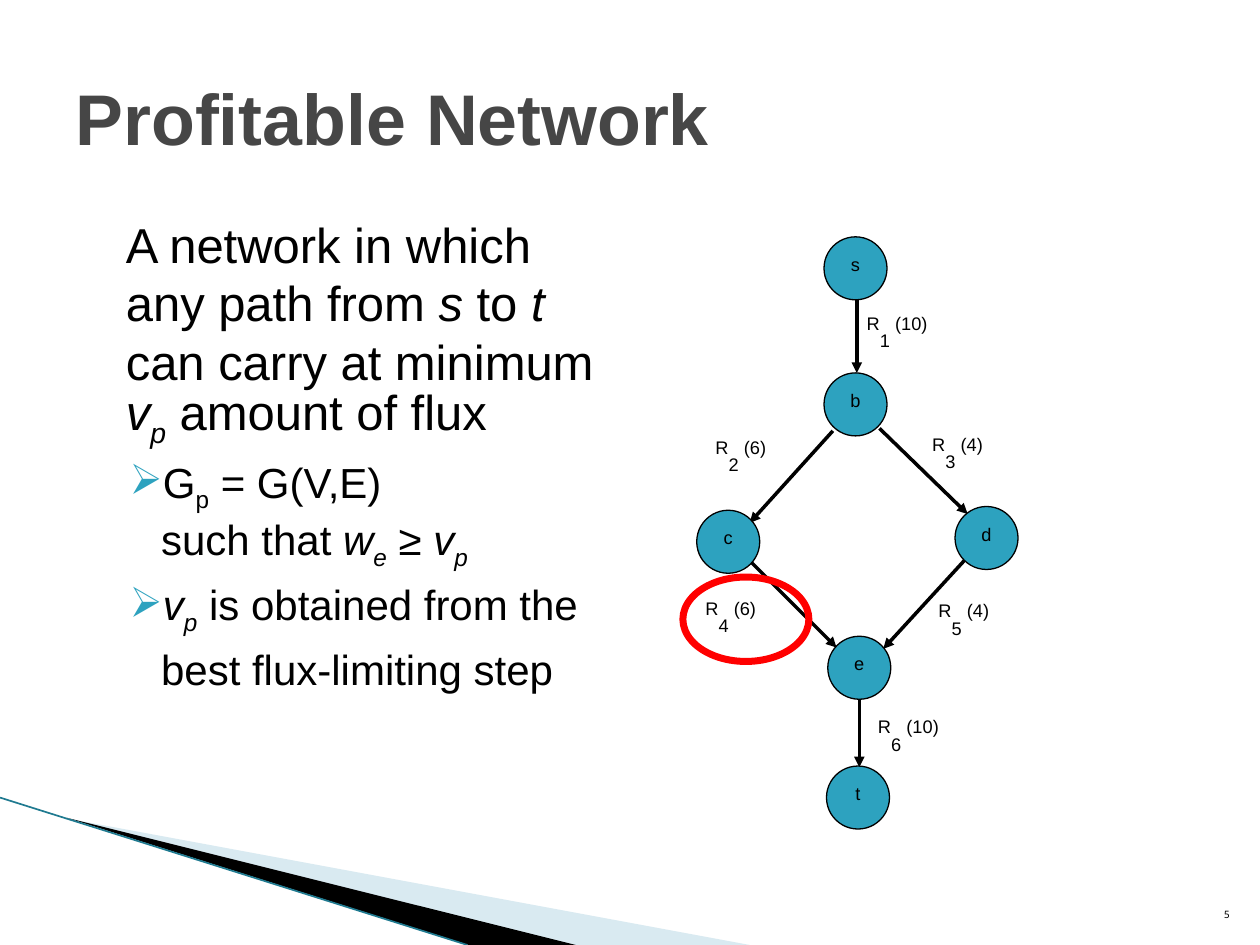
"""Build the Profitable Network slide with its flux graph."""
import pptx
import pptx.util
import pptx.dml.color
import pptx.enum.shapes
import pptx.enum.text
import pptx.oxml.ns
from lxml import etree

Inches = pptx.util.Inches
Pt = pptx.util.Pt
RGBColor = pptx.dml.color.RGBColor
PP_ALIGN = pptx.enum.text.PP_ALIGN
MSO_ANCHOR = pptx.enum.text.MSO_ANCHOR
MSO_SHAPE = pptx.enum.shapes.MSO_SHAPE
qn = pptx.oxml.ns.qn

BLACK = RGBColor(0, 0, 0)
GREY = RGBColor(0x46, 0x46, 0x46)
TEAL = RGBColor(0x2D, 0xA2, 0xBF)
PALE = RGBColor(0xA0, 0xCB, 0xDC)
EDGE = RGBColor(0x1F, 0x7A, 0x90)
RED = RGBColor(0xFF, 0, 0)
SUB, SUP = -25, 30
NODE_SIZE = 0.5

NODES = [("s", 6.54, 1.88), ("b", 6.54, 2.96), ("c", 5.53, 4.05),
         ("d", 7.58, 4.02), ("e", 6.57, 5.05), ("t", 6.56, 6.08)]
EDGES = [((6.8, 2.38), (6.8, 2.96)), ((6.61, 3.42), (5.95, 4.15)),
         ((6.98, 3.4), (7.68, 4.08)), ((5.96, 4.46), (6.64, 5.14)),
         ((7.68, 4.42), (7.01, 5.15)), ((6.82, 5.43), (6.82, 6.09))]
LABELS = [(6.78, 2.4, 10), (5.58, 3.38, 6), (7.3, 3.36, 4),
          (5.5, 4.66, 6), (7.35, 4.68, 4), (6.87, 5.6, 10)]


class Deck:
    def __init__(self):
        self.prs = pptx.Presentation()
        self.prs.slide_width, self.prs.slide_height = Inches(10), Inches(7.5)
        self.s = self.prs.slides.add_slide(self.prs.slide_layouts[5])
        self.font = "Arial"

    def run(self, p, text, size, color=BLACK, base=0, italic=None, bold=None, font=None):
        r = p.add_run()
        r.text = text
        f = r.font
        f.name, f.size, f.italic, f.bold = font or self.font, Pt(size), italic, bold
        f.color.rgb = color
        if base:
            r._r.get_or_add_rPr().set("baseline", str(base * 1000))

    def title(self, text):
        sp = self.s.shapes.title
        sp.left, sp.top, sp.width, sp.height = map(Inches, (0.5, 0.3, 9, 1.25))
        tf = sp.text_frame
        tf.vertical_anchor = MSO_ANCHOR.MIDDLE
        tf.paragraphs[0].alignment = PP_ALIGN.LEFT
        self.run(tf.paragraphs[0], text, 41, GREY, bold=True)

    def textbox(self, x, y, w, h, anchor=MSO_ANCHOR.TOP):
        tf = self.s.shapes.add_textbox(*map(Inches, (x, y, w, h))).text_frame
        tf.word_wrap = True
        tf.vertical_anchor = anchor
        return tf

    def paragraph(self, p, runs, size, spacing, margin, indent=0, before=0, bullet=None):
        pPr = p._p.get_or_add_pPr()
        pPr.set("marL", str(Inches(margin)))
        pPr.set("indent", str(Inches(indent)))
        p.line_spacing, p.space_before = Pt(spacing), Pt(before)
        if bullet:
            clr = etree.SubElement(pPr, qn("a:buClr"))
            etree.SubElement(clr, qn("a:srgbClr"), val=str(TEAL))
            etree.SubElement(pPr, qn("a:buChar"), char=bullet)
        for text, italic, base in runs:
            if text == "\n":
                p.add_line_break()
            else:
                self.run(p, text, size, base=base, italic=italic)

    def ellipse(self, x, y, w, h, line, weight, fill=None, text=None):
        sp = self.s.shapes.add_shape(MSO_SHAPE.OVAL, *map(Inches, (x, y, w, h)))
        sp.shadow.inherit = False
        sp.line.color.rgb, sp.line.width = line, Pt(weight)
        if fill is None:
            sp.fill.background()
        else:
            sp.fill.solid()
            sp.fill.fore_color.rgb = fill
        if text:
            tf = sp.text_frame
            tf.word_wrap = False
            tf.vertical_anchor = MSO_ANCHOR.MIDDLE
            tf.paragraphs[0].alignment = PP_ALIGN.CENTER
            self.run(tf.paragraphs[0], text, 18, base=SUP)

    def line(self, start, end, color=BLACK, weight=2, arrow=True):
        sp = self.s.shapes.add_connector(pptx.enum.shapes.MSO_CONNECTOR.STRAIGHT,
                                         *map(Inches, start + end))
        sp.line.color.rgb, sp.line.width = color, Pt(weight)
        if arrow:
            etree.SubElement(sp.line._get_or_add_ln(), qn("a:tailEnd"), type="triangle")
        etree.SubElement(sp._element.spPr, qn("a:effectLst"))

    def polygon(self, points, color, alpha=None):
        pts = [tuple(map(Inches, pt)) for pt in points]
        fb = self.s.shapes.build_freeform(*pts[0])
        fb.add_line_segments(pts[1:], close=True)
        sp = fb.convert_to_shape()
        sp.shadow.inherit = False
        sp.fill.solid()
        sp.fill.fore_color.rgb = color
        sp.line.fill.background()
        if alpha:
            clr = sp._element.spPr.find(".//" + qn("a:srgbClr"))
            etree.SubElement(clr, qn("a:alpha"), val=str(alpha * 1000))

    def label(self, x, y, number, flux):
        p = self.textbox(x, y, 0.97 if flux > 9 else 0.83, 0.4).paragraphs[0]
        for text, base in (("R", SUP), (f"{number} ", SUB), (f"({flux})", SUP)):
            self.run(p, text, 18, base=base)


def main():
    d = Deck()
    d.polygon([(0.55, 6.5), (5.95, 7.5), (4.56, 7.5)], PALE, 40)
    d.polygon([(0.53, 6.49), (4.57, 7.5), (3.72, 7.5)], BLACK)
    d.line((0, 6.33), (3.71, 7.5), EDGE, 0.95, arrow=False)
    d.title("Profitable Network")

    tf = d.textbox(0.5, 1.62, 4.42, 4.95)
    tf.margin_top = Inches(0.08)
    v_p = [("v", True, 0), ("p", True, SUB)]
    d.paragraph(tf.paragraphs[0], [
        ("A network in which any path from ", False, 0), ("s", True, 0),
        (" to ", False, 0), ("t", True, 0), (" can carry at minimum ", False, 0),
        *v_p, (" amount of flux", False, 0)], 28, 33.5, 0.4)
    bullets = [
        [("G", False, 0), ("p", False, SUB), (" = G(V,E)", False, 0), ("\n", False, 0),
         ("such that ", False, 0), ("w", True, 0), ("e", True, SUB),
         (" ≥ ", False, 0), *v_p],
        [*v_p, (" is obtained from the best flux-limiting step", False, 0)]]
    for runs in bullets:
        d.paragraph(tf.add_paragraph(), runs, 24, 33, 0.68, -0.25, 4, "➢")

    for start, end in EDGES:
        d.line(start, end)
    for name, x, y in NODES:
        d.ellipse(x, y, NODE_SIZE, NODE_SIZE, BLACK, 0.75, TEAL, name)
    for number, (x, y, flux) in enumerate(LABELS, 1):
        d.label(x, y, number, flux)
    d.ellipse(5.42, 4.58, 1, 0.67, RED, 4)

    p = d.textbox(9.46, 7.01, 0.4, 0.4, MSO_ANCHOR.BOTTOM).paragraphs[0]
    p.alignment = PP_ALIGN.RIGHT
    d.run(p, "5", 10, base=SUP, font="Noto Sans Mono")
    d.prs.save("out.pptx")


if __name__ == "__main__":
    main()
